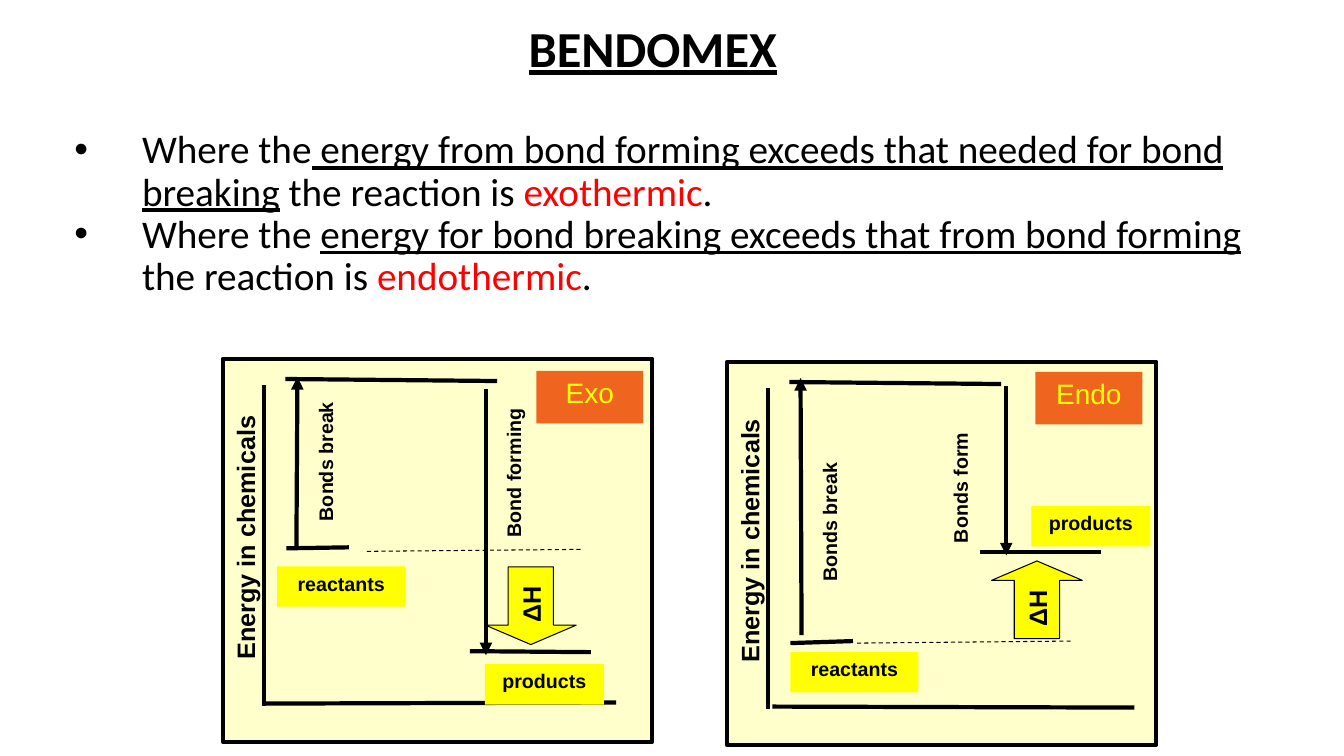
from lxml.etree import SubElement
from pptx import Presentation
from pptx.dml.color import RGBColor
from pptx.enum.dml import MSO_LINE
from pptx.enum.shapes import MSO_CONNECTOR, MSO_SHAPE
from pptx.enum.text import MSO_ANCHOR, MSO_AUTO_SIZE, PP_ALIGN
from pptx.oxml.ns import qn
from pptx.util import Pt

PX = 9144
BLACK, WHITE, RED, YELLOW = "000000", "FFFFFF", "FF0000", "FFFF00"
CREAM, ORANGE = "FFFFCC", "EF641F"

TITLE = "BENDOMEX"
BULLETS = [
    [("Where the", {}),
     (" energy from bond forming exceeds that needed for bond breaking", {"underline": True}),
     (" the reaction is ", {}), ("exothermic", {"color": RED}), (".", {})],
    [("Where the ", {}),
     ("energy for bond breaking exceeds that from bond forming", {"underline": True}),
     (" the reaction is ", {}), ("endothermic", {"color": RED}), (".", {})],
]

PANEL = (221, 356, 426, 380)
TOP_LEVEL = (283, 376, 493, 378)
ENERGY_AXIS = (262, 382, 262, 700)
AXIS_LABEL = ("Energy in chemicals", (84, 498, 318, 71))
DIAGRAMS = [
    {
        "shift": (0, 0),
        "lines": [(262, 698, 611, 697), (284, 544, 346, 543), (466, 646, 586, 647)],
        "arrows": [(294, 543, 295, 374), (482, 386, 482, 650)],
        "dashed": (364, 547, 577, 545),
        "boxes": [("reactants", (275, 562, 127, 40)), ("products", (481, 659, 118, 40))],
        "labels": [("Bonds break", (229, 439, 192, 38)), ("Bond forming", (418, 450, 187, 38))],
        "delta": ((488, 556, 77, 90), 90, True),
        "badge": ("Exo", (532, 368, 106, 52)),
    },
    {
        "shift": (500, 3),
        "lines": [(766, 701, 1125, 702), (784, 638, 846, 636), (972, 548, 1092, 548)],
        "arrows": [(795, 630, 794, 375), (998, 383, 998, 551)],
        "dashed": (850, 638, 1063, 636),
        "boxes": [("reactants", (784, 647, 127, 40)), ("products", (1023, 502, 118, 40))],
        "labels": [("Bonds break", (729, 499, 192, 38)), ("Bonds form", (861, 465, 187, 38))],
        "delta": ((990, 550, 77, 90), 270, False),
        "badge": ("Endo", (1027, 369, 106, 52)),
    },
]


def rgb(color):
    return RGBColor.from_string(color)


def emu(lengths):
    return [n * PX for n in lengths]


def add_run(p, text, size=14, font="Arial", color=BLACK, bold=False, underline=False):
    r = p.add_run()
    r.text = text
    r.font.size, r.font.name = Pt(size), font
    r.font.bold, r.font.underline = bold, underline
    r.font.color.rgb = rgb(color)


def write(sp, text, anchor=MSO_ANCHOR.TOP, wrap=True, **fmt):
    tf = sp.text_frame
    tf.word_wrap, tf.vertical_anchor = wrap, anchor
    p = tf.paragraphs[0]
    p.alignment = PP_ALIGN.CENTER
    add_run(p, text, **fmt)


def add_box(shapes, box, fill, width=0, kind=MSO_SHAPE.RECTANGLE):
    sp = shapes.add_shape(kind, *emu(box))
    sp.shadow.inherit = False
    sp.fill.solid()
    sp.fill.fore_color.rgb = rgb(fill)
    if width:
        sp.line.color.rgb = rgb(BLACK)
        sp.line.width = Pt(width)
    else:
        sp.line.fill.background()
    return sp


def add_line(shapes, ends, width=3, dash=False, arrow=False):
    c = shapes.add_connector(MSO_CONNECTOR.STRAIGHT, *emu(ends))
    c.line.color.rgb = rgb(BLACK)
    c.line.width = Pt(width)
    if dash:
        c.line.dash_style = MSO_LINE.DASH
    spPr = c._element.spPr
    if arrow:
        SubElement(spPr.find(qn("a:ln")), qn("a:tailEnd"), type="triangle")
    SubElement(spPr, qn("a:effectLst"))


def add_label(shapes, text, box, **fmt):
    sp = shapes.add_textbox(*emu(box))
    sp.rotation = 270
    write(sp, text, bold=True, **fmt)


def add_diagram(s, d):
    shapes = s.shapes.add_group_shape().shapes
    dx, dy = d["shift"]

    def moved(box):
        return box[0] + dx, box[1] + dy, box[2], box[3]

    def moved_line(ends):
        return ends[0] + dx, ends[1] + dy, ends[2] + dx, ends[3] + dy

    add_box(shapes, moved(PANEL), CREAM, width=3)
    for ends in [moved_line(TOP_LEVEL), moved_line(ENERGY_AXIS)] + d["lines"]:
        add_line(shapes, ends)
    for ends in d["arrows"]:
        add_line(shapes, ends, arrow=True)
    add_line(shapes, d["dashed"], width=0.75, dash=True)

    text, box = AXIS_LABEL
    add_label(shapes, text, moved(box), size=18, anchor=MSO_ANCHOR.MIDDLE, wrap=False)
    for text, box in d["boxes"]:
        write(add_box(shapes, box, YELLOW), text, bold=True)

    box, angle, flipped = d["delta"]
    delta = add_box(shapes, box, YELLOW, width=0.75, kind=MSO_SHAPE.RIGHT_ARROW)
    delta.adjustments[0], delta.adjustments[1] = 0.5, 0.25
    delta.rotation = angle
    if flipped:
        delta._element.spPr.xfrm.set("flipV", "1")
    write(delta, "ΔH ", anchor=MSO_ANCHOR.MIDDLE, size=18, bold=True)

    for text, box in d["labels"]:
        add_label(shapes, text, box)
    text, box = d["badge"]
    write(add_box(shapes, box, ORANGE), text, size=20, color=YELLOW)


def add_title(s):
    sp = s.shapes.title
    sp.left, sp.top, sp.width, sp.height = emu((289, 19, 717, 64))
    sp.fill.solid()
    sp.fill.fore_color.rgb = rgb(WHITE)
    sp.line.color.rgb = rgb(WHITE)
    sp.line.width = Pt(0.75)
    write(sp, TITLE, anchor=MSO_ANCHOR.MIDDLE, size=36, font="Calibri", bold=True, underline=True)
    sp.text_frame.auto_size = MSO_AUTO_SIZE.NONE
    sp.text_frame.paragraphs[0].line_spacing = 0.9


def add_bullets(s):
    tf = s.shapes.add_textbox(*emu((64, 124, 1225, 191))).text_frame
    tf.word_wrap = True
    for i, runs in enumerate(BULLETS):
        p = tf.add_paragraph() if i else tf.paragraphs[0]
        p.line_spacing = 0.9
        pPr = p._p.get_or_add_pPr()
        pPr.set("marL", str(67 * PX))
        pPr.set("indent", str(-67 * PX))
        SubElement(pPr, qn("a:buFont"), typeface="Arial")
        SubElement(pPr, qn("a:buChar"), char="•")
        for text, fmt in runs:
            add_run(p, text, size=28, font="Calibri", **fmt)


def main():
    prs = Presentation()
    prs.slide_width, prs.slide_height = emu((1333, 750))
    s = prs.slides.add_slide(prs.slide_layouts[5])
    add_title(s)
    add_bullets(s)
    for d in DIAGRAMS:
        add_diagram(s, d)
    prs.save("out.pptx")


if __name__ == "__main__":
    main()
